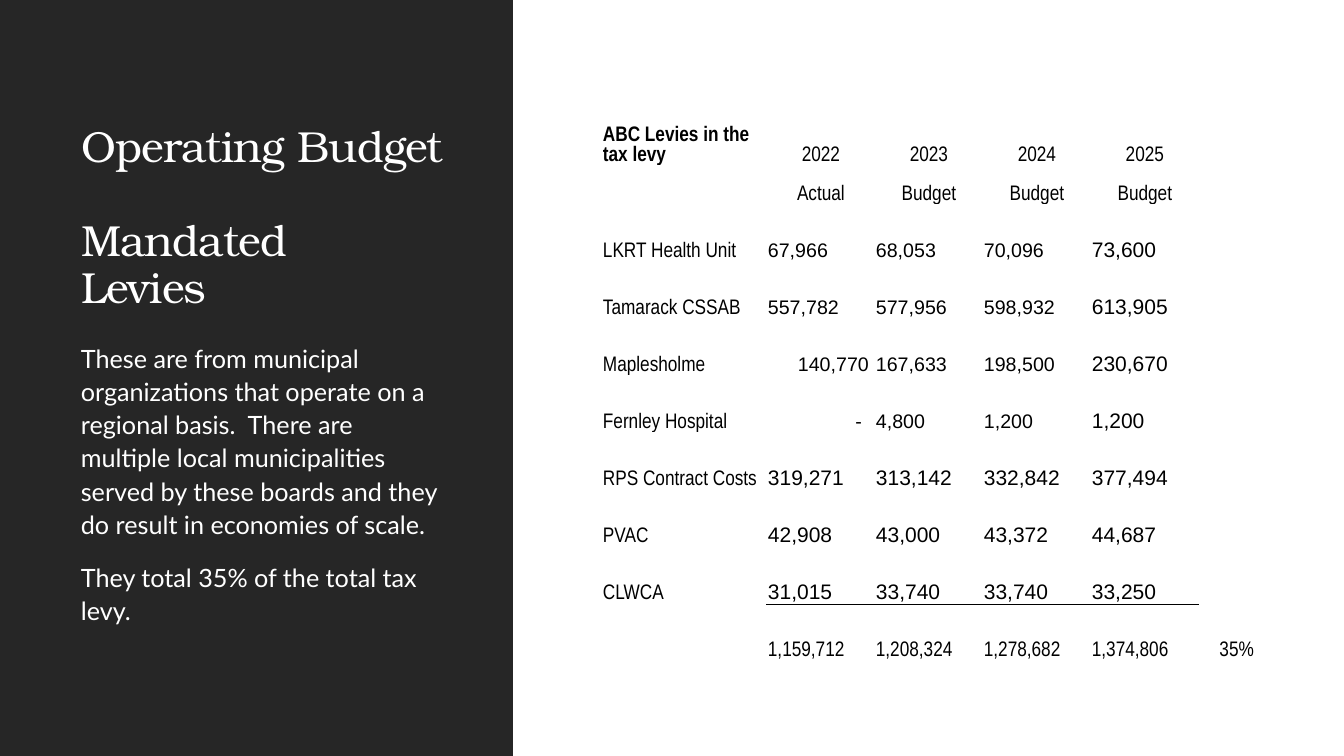
import dataclasses

import pptx
import pptx.dml.color
import pptx.enum.shapes
import pptx.enum.text
import pptx.oxml
import pptx.oxml.ns
import pptx.util

ALIGN = pptx.enum.text.PP_ALIGN
ANCHOR = pptx.enum.text.MSO_ANCHOR


@dataclasses.dataclass(frozen=True)
class Theme:
    """Hold the colours, fonts and type sizes."""
    dark: str = "262626"
    light: str = "FFFFFF"
    ink: str = "000000"
    serif: str = "TeX Gyre Bonum"
    sans: str = "Lato"
    narrow: str = "Arial Narrow"
    digit: str = "Arial"
    head: int = 31
    body: int = 18
    cell: int = 15
    small: int = 14


THEME = Theme()
COLS = [165, 108, 108, 108, 108, 56]
ROWS = [57, 39] + [57] * 8
HEADS = [
    ["ABC Levies in the tax levy", "2022", "2023", "2024", "2025"],
    ["", "Actual", "Budget", "Budget", "Budget"],
]
LEVIES = [
    ["LKRT Health Unit", "67,966", "68,053", "70,096", "73,600"],
    ["Tamarack CSSAB", "557,782", "577,956", "598,932", "613,905"],
    ["Maplesholme", "140,770", "167,633", "198,500", "230,670"],
    ["Fernley Hospital", "-", "4,800", "1,200", "1,200"],
    ["RPS Contract Costs", "319,271", "313,142", "332,842", "377,494"],
    ["PVAC", "42,908", "43,000", "43,372", "44,687"],
    ["CLWCA", "31,015", "33,740", "33,740", "33,250"],
]
TOTALS = ["", "1,159,712", "1,208,324", "1,278,682", "1,374,806", "35%"]
INSETS = {"140,770": 6, "-": 13}


def px(num):
    """Turn pixels into EMU."""
    return pptx.util.Emu(round(num * 914400 / 100.8))


def tint(code):
    """Return a colour from its hex code."""
    return pptx.dml.color.RGBColor.from_string(code)


def write(frame, text, font, size, color, bold=False, align=ALIGN.LEFT,
          line=None, before=0, after=0, track=None):
    """Fill a text frame, one paragraph for each line of text."""
    frame.word_wrap = True
    frame.text = text
    for para in frame.paragraphs:
        para.alignment = align
        para.line_spacing = line
        para.space_before = pptx.util.Pt(before)
        para.space_after = pptx.util.Pt(after)
        for run in para.runs:
            run.font.name = font
            run.font.size = pptx.util.Pt(size)
            run.font.bold = bold
            run.font.color.rgb = tint(color)
            if track is not None:
                run.font._element.set("spc", str(round(track * 100)))


def panel(slide, left, top, width, height):
    """Draw the dark panel behind all else."""
    box = slide.shapes.add_shape(
        pptx.enum.shapes.MSO_SHAPE.RECTANGLE,
        px(left), px(top), px(width), px(height))
    box.shadow.inherit = False
    box.fill.solid()
    box.fill.fore_color.rgb = tint(THEME.dark)
    box.line.fill.background()
    slide.shapes._spTree.insert(2, box._element)


def title(slide, text, left, top, width, height):
    """Place and format the title."""
    shape = slide.shapes.title
    shape.left, shape.top = px(left), px(top)
    shape.width, shape.height = px(width), px(height)
    frame = shape.text_frame
    frame.auto_size = pptx.enum.text.MSO_AUTO_SIZE.NONE
    frame.vertical_anchor = ANCHOR.BOTTOM
    write(frame, text, THEME.serif, THEME.head, THEME.light,
          line=0.9, before=33.5, track=-0.5)


def note(slide, text, left, top, width, height):
    """Add the text below the title."""
    box = slide.shapes.add_textbox(px(left), px(top), px(width), px(height))
    write(box.text_frame, text, THEME.sans, THEME.body, THEME.light,
          line=1.1, before=12, after=2)


def rule(cell, side):
    """Draw a thin line on the top (T) or bottom (B) of a cell."""
    line = pptx.oxml.parse_xml(
        f'<a:ln{side} {pptx.oxml.ns.nsdecls("a")} w="6350"><a:solidFill>'
        f'<a:srgbClr val="{THEME.ink}"/></a:solidFill></a:ln{side}>')
    cell._tc.get_or_add_tcPr().insert(0, line)


def style(row, col, text):
    """Choose the format of a table cell."""
    look = {"font": THEME.narrow, "size": THEME.cell, "color": THEME.ink}
    levy = len(HEADS) <= row < len(HEADS) + len(LEVIES)
    if levy and col > 0:
        look["font"] = THEME.digit
        if row < 6 and col < 4:
            look["size"] = THEME.small
    if row < len(HEADS) and col > 0:
        look["align"] = ALIGN.CENTER
    elif text in INSETS or col == 5:
        look["align"] = ALIGN.RIGHT
    look["bold"] = row == 0 and col == 0
    return look


def grid(slide, data, left, top):
    """Add the table of levies."""
    table = slide.shapes.add_table(
        len(ROWS), len(COLS), px(left), px(top),
        px(sum(COLS)), px(sum(ROWS))).table
    table.first_row = table.horz_banding = False
    for col, width in zip(table.columns, COLS):
        col.width = px(width)
    for row, height in zip(table.rows, ROWS):
        row.height = px(height)
    sides = {len(ROWS) - 2: "B", len(ROWS) - 1: "T"}
    for i, row in enumerate(table.rows):
        for j, cell in enumerate(row.cells):
            text = data[i][j] if j < len(data[i]) else ""
            cell.fill.background()
            cell.vertical_anchor = ANCHOR.BOTTOM
            cell.margin_left = cell.margin_top = px(1)
            cell.margin_right = px(INSETS.get(text, 1))
            cell.margin_bottom = 0
            if text:
                write(cell.text_frame, text, **style(i, j, text))
            if i in sides and 0 < j < 5:
                rule(cell, sides[i])


def main():
    """Build the slide and save it."""
    deck = pptx.Presentation()
    deck.slide_width, deck.slide_height = px(1344), px(756)
    slide = deck.slides.add_slide(deck.slide_layouts[5])
    panel(slide, 0, 0, 513, 756)
    title(slide, "Operating Budget\nMandated\vLevies", 71, 87, 388, 231)
    note(slide,
         "These are from municipal organizations that operate on a regional "
         "basis.  There are multiple local municipalities served by these "
         "boards and they do result in economies of scale.\n"
         "They total 35% of the total tax levy.", 71, 335, 382, 338)
    grid(slide, HEADS + LEVIES + [TOTALS], 602, 109)
    deck.save("out.pptx")


if __name__ == "__main__":
    main()
